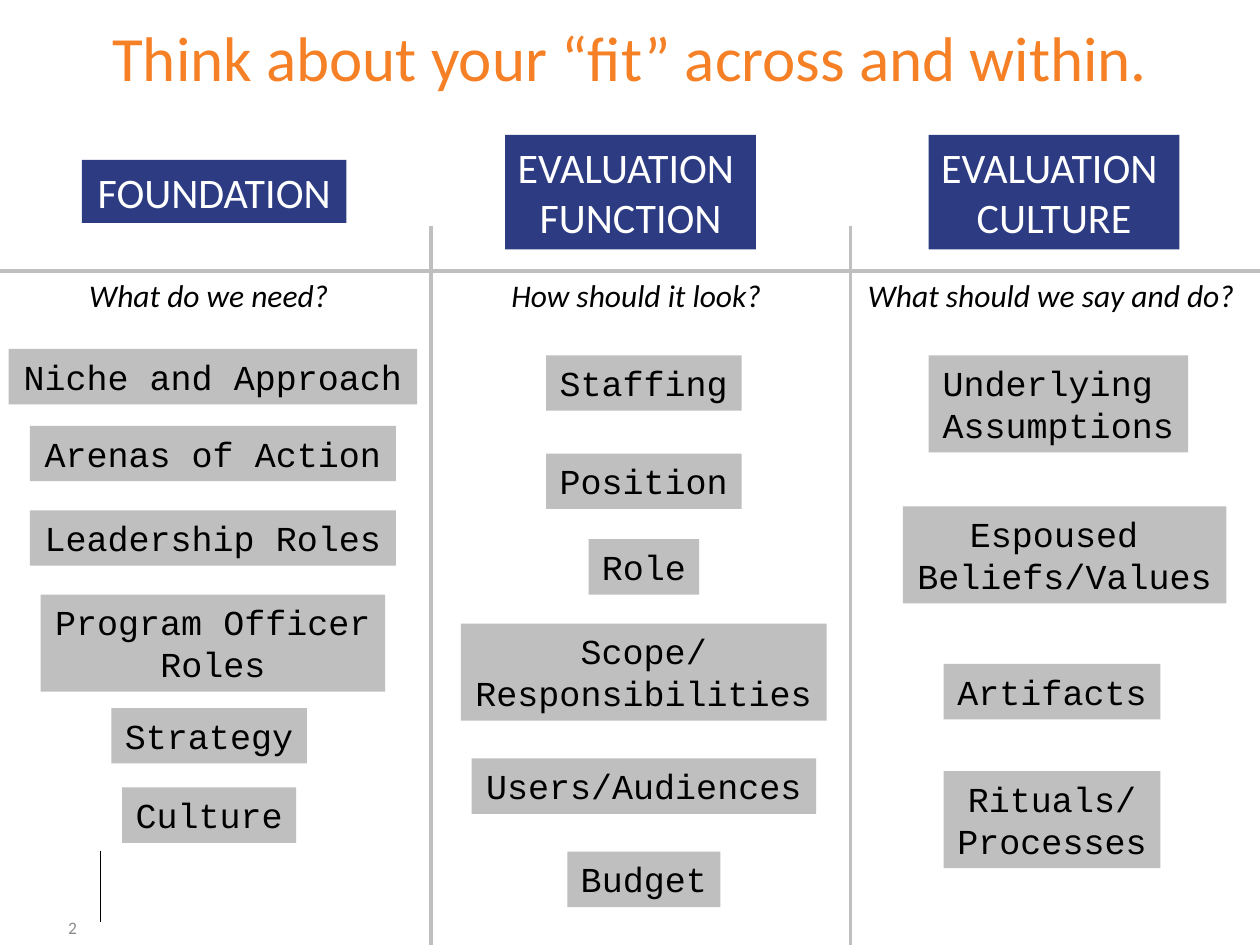
"""Build a three-column slide about evaluation fit across and within a foundation."""
from dataclasses import dataclass
from typing import NamedTuple

from lxml.etree import SubElement
from pptx import Presentation
from pptx.dml.color import RGBColor as RGB
from pptx.enum.shapes import MSO_CONNECTOR as CONN, MSO_SHAPE as SHAPE
from pptx.enum.text import MSO_ANCHOR as ANCHOR, MSO_AUTO_SIZE as AUTO, PP_ALIGN as ALIGN
from pptx.oxml.ns import qn
from pptx.util import Inches, Pt

COLS, ROWS = 100, 75
CELL = Inches(0.1)


class Style(NamedTuple):
    font: str
    size: int
    color: RGB
    fill: RGB | None = None
    italic: bool = False


@dataclass(frozen=True)
class Theme:
    rule: RGB = RGB(0xBF, 0xBF, 0xBF)
    black: RGB = RGB(0, 0, 0)
    title: Style = Style("Calibri", 36, RGB(0xF5, 0x80, 0x25))
    header: Style = Style("Calibri", 24, RGB(255, 255, 255), RGB(0x2C, 0x3B, 0x82))
    question: Style = Style("Calibri", 18, RGB(0, 0, 0), None, True)
    topic: Style = Style("Courier New", 20, RGB(0, 0, 0), RGB(0xBF, 0xBF, 0xBF))
    number: Style = Style("Calibri", 10, RGB(0x8C, 0x8C, 0x8C))


class Box(NamedTuple):
    x: float
    y: float
    w: float
    h: float


class Topic(NamedTuple):
    text: str
    center: float
    top: float


class Column(NamedTuple):
    header: str
    header_box: Box
    question: str
    question_box: Box
    topics: list[Topic]


THEME = Theme()
COLUMNS = [
    Column("FOUNDATION ", Box(6.5, 12.7, 21, 5), "What do we need?", Box(6.1, 21.4, 21.8, 4), [
        Topic("Niche and Approach", 16.9, 27.7),
        Topic("Arenas of Action", 16.9, 33.8),
        Topic("Leadership Roles", 16.9, 40.5),
        Topic("Program Officer \nRoles", 16.9, 47.2),
        Topic("Strategy", 16.6, 56.2),
        Topic("Culture", 16.6, 62.5)]),
    Column("EVALUATION \nFUNCTION", Box(40.1, 10.7, 19.9, 9.1),
           "How should it look?", Box(39.6, 21.4, 22.7, 4), [
        Topic("Staffing", 51.1, 28.2),
        Topic("Position", 51.1, 36),
        Topic("Role", 51.1, 42.8),
        Topic("Scope/\nResponsibilities", 51.1, 49.5),
        Topic("Users/Audiences", 51.1, 60.2),
        Topic("Budget", 51.1, 67.6)]),
    Column("EVALUATION \nCULTURE", Box(73.7, 10.7, 19.9, 9.1),
           "What should we say and do?", Box(67.9, 21.4, 32, 4), [
        Topic("Underlying \nAssumptions", 84, 28.2),
        Topic("Espoused \nBeliefs/Values", 84.5, 40.2),
        Topic("Artifacts", 83.5, 52.7),
        Topic("Rituals/\nProcesses", 83.5, 61.2)]),
]


def grid(*cells: float) -> list[int]:
    """Turn grid cells into lengths."""
    return [round(c * CELL) for c in cells]


def add_label(s, text: str, box: Box, style: Style, align=ALIGN.CENTER,
              anchor=ANCHOR.TOP, wrap: bool = False) -> None:
    """Add a text box, or a filled rectangle when the style has a fill."""
    if style.fill is None:
        sp = s.shapes.add_textbox(*grid(*box))
    else:
        sp = s.shapes.add_shape(SHAPE.RECTANGLE, *grid(*box))
        sp.shadow.inherit = False
        sp.fill.solid()
        sp.fill.fore_color.rgb = style.fill
        sp.line.fill.background()
    tf = sp.text_frame
    tf.text = text
    tf.word_wrap = wrap
    tf.auto_size = AUTO.NONE if wrap else AUTO.SHAPE_TO_FIT_TEXT
    tf.vertical_anchor = anchor
    for p in tf.paragraphs:
        p.alignment = align
        p.font.name, p.font.size = style.font, Pt(style.size)
        p.font.italic = style.italic
        p.font.color.rgb = style.color


def add_topic(s, topic: Topic) -> None:
    """Add a topic box sized by its longest line and centred in its column."""
    lines = [line.rstrip() for line in topic.text.split("\n")]
    w = 2 + 1.69 * max(map(len, lines))
    h = 1.1 + 3.3 * len(lines)
    add_label(s, topic.text, Box(topic.center - w / 2, topic.top, w, h), THEME.topic)


def add_rule(s, x1: float, y1: float, x2: float, y2: float, color: RGB, width: float) -> None:
    """Add a straight line without shadow."""
    c = s.shapes.add_connector(CONN.STRAIGHT, *grid(x1, y1, x2, y2))
    c.line.color.rgb = color
    c.line.width = Pt(width)
    SubElement(c._element.spPr, qn("a:effectLst"))


def main() -> None:
    """Draw the slide and save it."""
    prs = Presentation()
    prs.slide_width, prs.slide_height = grid(COLS, ROWS)
    s = prs.slides.add_slide(prs.slide_layouts[6])
    add_rule(s, 8, 67.5, 8, 73.2, THEME.black, 0.5)
    add_label(s, "Think about your “fit” across and within.", Box(0, 0, COLS, 9),
              THEME.title, anchor=ANCHOR.MIDDLE, wrap=True)
    for x in (34.2, 67.5):
        add_rule(s, x, ROWS, x, 17.9, THEME.rule, 2)
    add_rule(s, COLS, 21.5, 0, 21.5, THEME.rule, 2)
    for col in COLUMNS:
        add_label(s, col.header, col.header_box, THEME.header)
        add_label(s, col.question, col.question_box, THEME.question, ALIGN.LEFT)
        for topic in col.topics:
            add_topic(s, topic)
    add_label(s, "2", Box(0, 72.2, 7.1, 2.8), THEME.number, ALIGN.RIGHT, ANCHOR.MIDDLE, True)
    prs.save("out.pptx")


if __name__ == "__main__":
    main()
